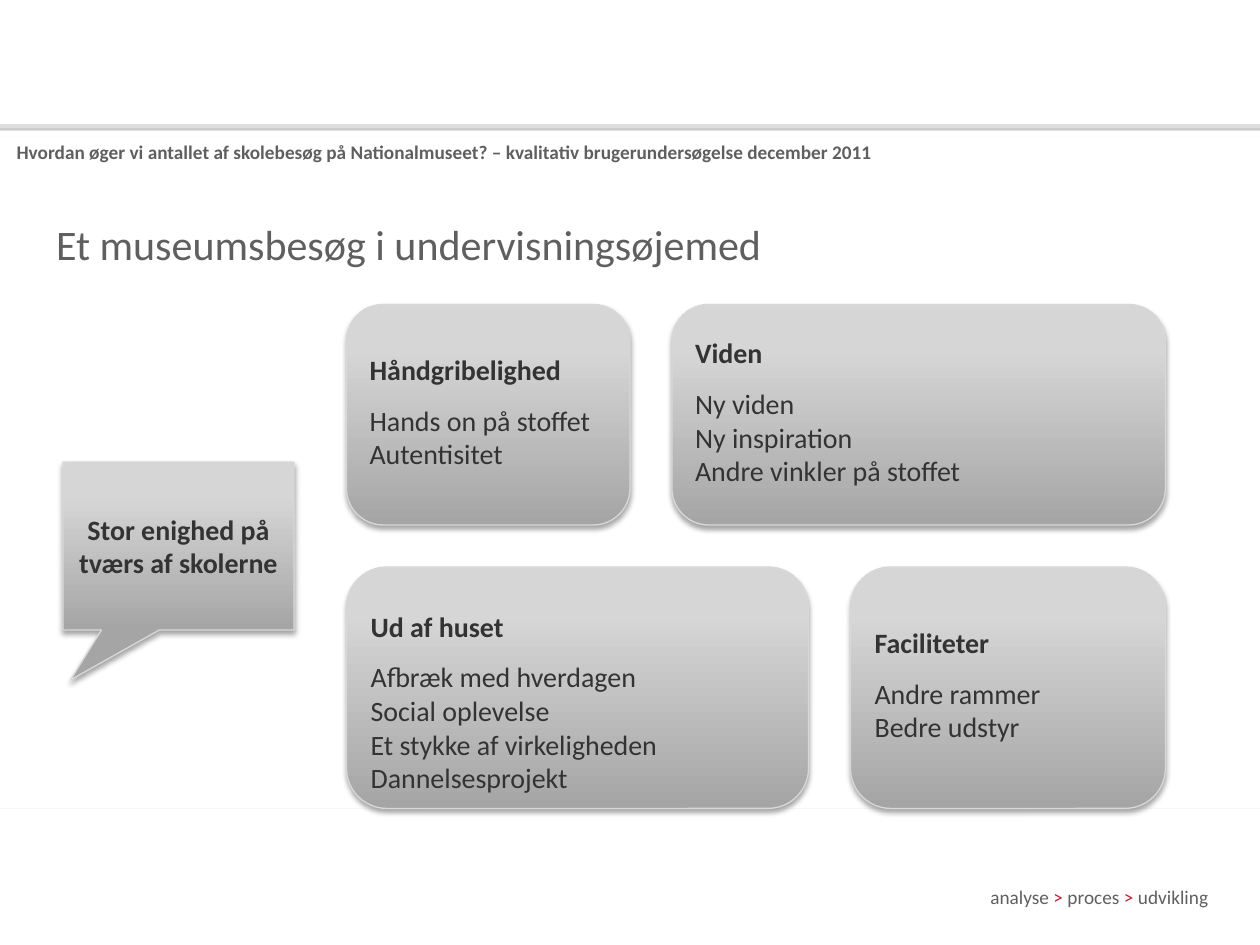
from copy import deepcopy
from dataclasses import dataclass

from lxml import etree
from pptx import Presentation
from pptx.dml.color import RGBColor
from pptx.enum import shapes, text
from pptx.oxml import ns
from pptx.util import Pt


@dataclass(frozen=True)
class Theme:
    font: str = "Calibri"
    small: float = 11
    body: float = 16
    title: float = 24
    white: str = "FFFFFF"
    grey: str = "5F5F5F"
    dark: str = "333333"
    accent: str = "BF1E2D"
    rule: str = "DDDDDD"
    faint_rule: str = "F8F8F8"
    outline: str = "D8D8D8"
    gradient: tuple = ((0, "A5A5A5"), (0.8, "D6D6D6"), (1, "D7D7D7"))


@dataclass(frozen=True)
class Box:
    left: float
    top: float
    width: float
    height: float

    def lengths(self):
        return Pt(self.left), Pt(self.top), Pt(self.width), Pt(self.height)


@dataclass(frozen=True)
class Shadow:
    color: str
    alpha: int
    blur: float
    distance: float


@dataclass(frozen=True)
class Card:
    box: Box
    heading: str
    lines: tuple
    top_inset: float = 0


THEME = Theme()
WIDTH, HEIGHT = 720, 540
HEADING_GAP = 9.8
PANEL_SHADOW = Shadow("000000", 35, 3.1, 1.8)
RULE_SHADOW = Shadow("808080", 38, 0, 1.6)
CARDS = (
    Card(Box(198, 174, 162, 126), "Håndgribelighed",
         ("Hands on på stoffet", "Autentisitet")),
    Card(Box(198, 324, 264, 138), "Ud af huset",
         ("Afbræk med hverdagen", "Social oplevelse",
          "Et stykke af virkeligheden", "Dannelsesprojekt"), 19.5),
    Card(Box(486, 324, 180, 138), "Faciliteter",
         ("Andre rammer", "Bedre udstyr")),
    Card(Box(384, 174, 282, 126), "Viden",
         ("Ny viden", "Ny inspiration", "Andre vinkler på stoffet")),
)


def add_alpha(color_element, percent: int) -> None:
    etree.SubElement(color_element, ns.qn("a:alpha"), val=str(percent * 1000))


def set_shadow(shape, shadow: Shadow | None = None) -> None:
    """Replace the theme's effects with the given downward shadow, or none."""
    effects = etree.SubElement(shape._element.spPr, ns.qn("a:effectLst"))
    if shadow:
        outer = etree.SubElement(
            effects, ns.qn("a:outerShdw"), blurRad=str(Pt(shadow.blur)),
            dist=str(Pt(shadow.distance)), dir="5400000", rotWithShape="0")
        color = etree.SubElement(outer, ns.qn("a:srgbClr"), val=shadow.color)
        add_alpha(color, shadow.alpha)


def style_run(run, size: float, color: str, bold: bool = False) -> None:
    run.font.name = THEME.font
    run.font.size = Pt(size)
    run.font.bold = bold
    run.font.color.rgb = RGBColor.from_string(color)


def set_text(shape, content: str, size: float, color: str,
             bold: bool = False, align=text.PP_ALIGN.LEFT) -> None:
    frame = shape.text_frame
    frame.text = content
    frame.word_wrap = True
    frame.vertical_anchor = text.MSO_ANCHOR.MIDDLE
    for paragraph in frame.paragraphs:
        paragraph.alignment = align
        for run in paragraph.runs:
            style_run(run, size, color, bold)


def add_rule(slide, y: float, color: str, width: float,
             shadow: Shadow | None = None) -> None:
    line = slide.shapes.add_connector(
        shapes.MSO_CONNECTOR.STRAIGHT, Pt(0), Pt(y), Pt(WIDTH), Pt(y))
    line.line.color.rgb = RGBColor.from_string(color)
    line.line.width = Pt(width)
    set_shadow(line, shadow)


def add_panel(slide, kind, box: Box):
    """Add a grey gradient shape with a thin outline and a shadow."""
    shape = slide.shapes.add_shape(kind, *box.lengths())
    shape.fill.gradient()
    shape.fill.gradient_angle = 90
    stop_list = shape._element.spPr.find(".//" + ns.qn("a:gsLst"))
    stop_list.append(deepcopy(stop_list[-1]))
    for stop, (position, color) in zip(shape.fill.gradient_stops, THEME.gradient):
        stop.position = position
        stop.color.rgb = RGBColor.from_string(color)
    shape.line.color.rgb = RGBColor.from_string(THEME.outline)
    shape.line.width = Pt(0.75)
    set_shadow(shape, PANEL_SHADOW)
    return shape


def add_card(slide, card: Card) -> None:
    shape = add_panel(slide, shapes.MSO_SHAPE.ROUNDED_RECTANGLE, card.box)
    set_text(shape, "\n".join((card.heading, *card.lines)), THEME.body, THEME.dark)
    frame = shape.text_frame
    frame.margin_top = Pt(card.top_inset)
    frame.paragraphs[0].runs[0].font.bold = True
    frame.paragraphs[1].space_before = Pt(HEADING_GAP)


def add_callout(slide) -> None:
    shape = add_panel(slide, shapes.MSO_SHAPE.RECTANGULAR_CALLOUT,
                      Box(36, 264, 132, 96))
    shape.adjustments[0] = -0.467
    shape.adjustments[1] = 0.797
    set_text(shape, "Stor enighed på tværs af skolerne", THEME.body,
             THEME.dark, bold=True, align=text.PP_ALIGN.CENTER)


def add_header(slide) -> None:
    band = slide.shapes.add_shape(
        shapes.MSO_SHAPE.RECTANGLE, *Box(0, 66, WIDTH, 42).lengths())
    band.fill.solid()
    band.fill.fore_color.rgb = RGBColor.from_string(THEME.white)
    add_alpha(band._element.spPr.find(".//" + ns.qn("a:srgbClr")), 75)
    band.line.fill.background()
    set_shadow(band)
    set_text(band, "Hvordan øger vi antallet af skolebesøg på Nationalmuseet? "
             "– kvalitativ brugerundersøgelse december 2011",
             THEME.small, THEME.grey, bold=True)
    band.text_frame.margin_left = Pt(9.5)


def add_footer(slide) -> None:
    footer = slide.shapes.add_textbox(*Box(450, 502.5, 247.5, 21).lengths())
    footer.text_frame.word_wrap = True
    paragraph = footer.text_frame.paragraphs[0]
    paragraph.alignment = text.PP_ALIGN.RIGHT
    for part in ("analyse ", ">", " proces ", ">", " udvikling"):
        run = paragraph.add_run()
        run.text = part
        style_run(run, THEME.small, THEME.accent if part == ">" else THEME.grey)


def main() -> None:
    presentation = Presentation()
    presentation.slide_width, presentation.slide_height = Pt(WIDTH), Pt(HEIGHT)
    slide = presentation.slides.add_slide(presentation.slide_layouts[6])
    add_rule(slide, 462, THEME.faint_rule, 1)
    add_rule(slide, 78.5, THEME.faint_rule, 1)
    add_header(slide)
    add_rule(slide, 72, THEME.rule, 2, RULE_SHADOW)
    add_footer(slide)
    title = slide.shapes.add_textbox(*Box(25, 118, 664, 42).lengths())
    set_text(title, "Et museumsbesøg i undervisningsøjemed", THEME.title, THEME.grey)
    for card in CARDS:
        add_card(slide, card)
    add_callout(slide)
    presentation.save("out.pptx")


if __name__ == "__main__":
    main()
